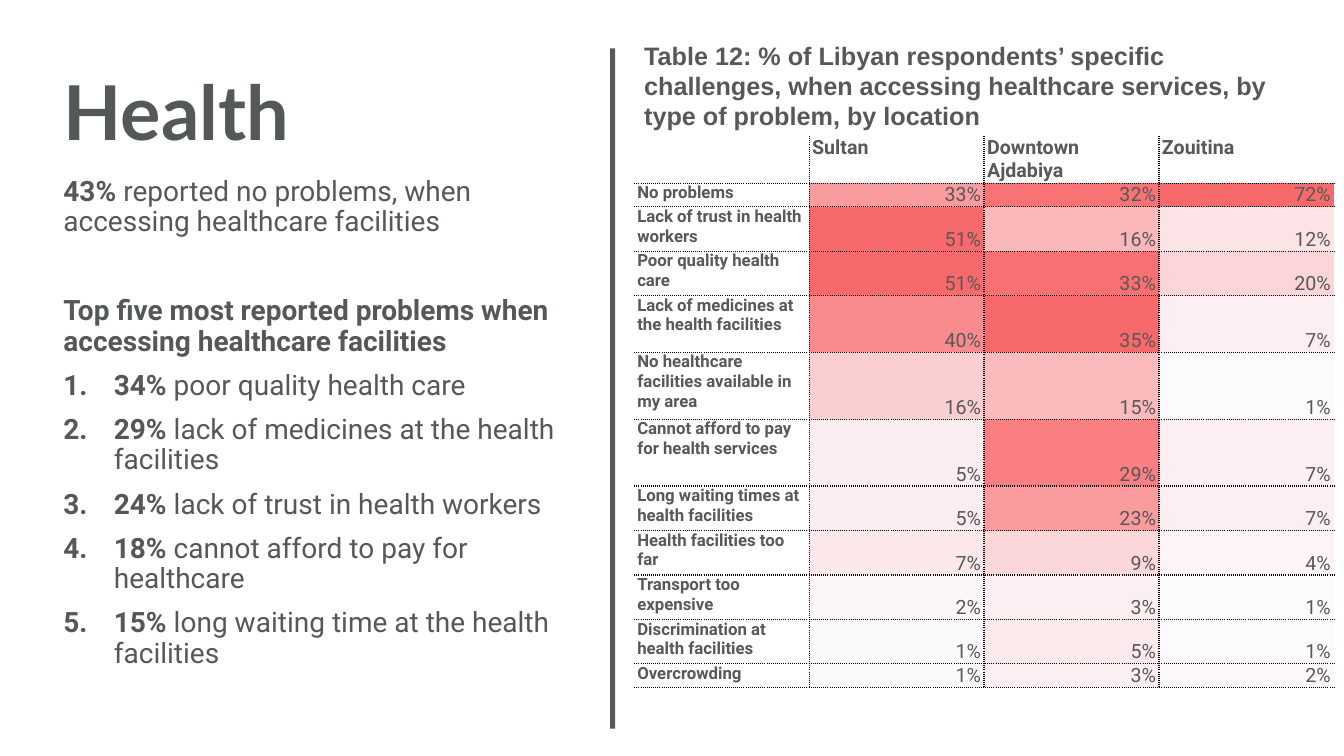
"""Build the health slide: key findings on the left, a shaded table on the right."""
from lxml.etree import SubElement
from pptx import Presentation
from pptx.dml.color import RGBColor
from pptx.enum.shapes import MSO_SHAPE as Shape
from pptx.enum.text import MSO_ANCHOR as Anchor, MSO_AUTO_SIZE as AutoSize, PP_ALIGN as Align
from pptx.oxml.ns import qn
from pptx.util import Inches, Pt

WIDTH, HEIGHT = Inches(13.33), Inches(7.5)
GREY, TABLE_GREY = "555859", "58585A"

FINDINGS = [
    ("34% ", "poor quality health care"),
    ("29% ", "lack of medicines at the health facilities"),
    ("24% ", "lack of trust in health workers"),
    ("18% ", "cannot afford to pay for healthcare"),
    ("15% ", "long waiting time at the health facilities"),
]
LOCATIONS = ["", "Sultan", "Downtown Ajdabiya", "Zouitina"]
HEADER_HEIGHT = 6.13
PROBLEMS = [
    ("No problems", 3.1, (33, "FA9C9F"), (32, "F97274"), (72, "F8696B")),
    ("Lack of trust in health workers", 5.88, (51, "F8696B"), (16, "FBB8BB"), (12, "FCE3E6")),
    ("Poor quality health care", 5.88, (51, "F8696B"), (33, "F97072"), (20, "FBD5D7")),
    ("Lack of medicines at the health facilities", 7.5,
     (40, "F98A8D"), (35, "F8696B"), (7, "FCEEF1")),
    ("No healthcare facilities available in my area", 8.85,
     (16, "FBCFD2"), (15, "FBBBBD"), (1, "FCFAFD")),
    ("Cannot afford to pay for health services", 8.85,
     (5, "FCEDF0"), (29, "F97F82"), (7, "FCEEF1")),
    ("Long waiting times at health facilities", 5.88,
     (5, "FCEDF0"), (23, "FA9C9E"), (7, "FCEEF1")),
    ("Health facilities too far", 5.88, (7, "FCE7EA"), (9, "FBD7DA"), (4, "FCF4F7")),
    ("Transport too expensive", 5.88, (2, "FCF6F9"), (3, "FCEFF2"), (1, "FCFAFD")),
    ("Discrimination at health facilities", 5.88,
     (1, "FCF9FC"), (5, "FCE9EC"), (1, "FCFAFD")),
    ("Overcrowding", 3.1, (1, "FCF9FC"), (3, "FCEFF2"), (2, "FCF8FB")),
]


def color(hex_code):
    """Turn a hex string into a colour."""
    return RGBColor.from_string(hex_code)


def across(percent):
    """Return a share of the slide width."""
    return int(WIDTH * percent / 100)


def down(percent):
    """Return a share of the slide height."""
    return int(HEIGHT * percent / 100)


def area(left, top, width, height):
    """Return a rectangle given in percent of the slide."""
    return across(left), down(top), across(width), down(height)


def add_run(paragraph, text, size, bold=True, font="Roboto", hex_code=GREY):
    """Add one formatted run to a paragraph."""
    run = paragraph.add_run()
    run.text = text
    run.font.name, run.font.size, run.font.bold = font, Pt(size), bold
    run.font.color.rgb = color(hex_code)


def number(paragraph):
    """Give a paragraph a hanging automatic number."""
    properties = paragraph._p.get_or_add_pPr()
    properties.set("marL", str(Inches(0.5)))
    properties.set("indent", str(-Inches(0.5)))
    SubElement(properties, qn("a:buFont"), typeface="+mj-lt")
    SubElement(properties, qn("a:buAutoNum"), type="arabicPeriod")


def add_divider(slide):
    """Draw the vertical bar between the two halves."""
    bar = slide.shapes.add_shape(Shape.RECTANGLE, *area(45.39, 6.4, 0.38, 90))
    bar.shadow.inherit = False
    bar.fill.solid()
    bar.fill.fore_color.rgb = color(GREY)
    bar.line.fill.background()


def set_title(slide, text):
    """Place and format the title placeholder."""
    title = slide.shapes.title
    title.left, title.top, title.width, title.height = area(3.98, 9.33, 38.78, 12.8)
    frame = title.text_frame
    frame.vertical_anchor, frame.auto_size = Anchor.TOP, AutoSize.NONE
    paragraph = frame.paragraphs[0]
    paragraph.alignment, paragraph.line_spacing = Align.LEFT, 0.9
    add_run(paragraph, text, 54, font="Lato")


def add_text_frame(slide, bounds):
    """Add a wrapping text box and return its frame."""
    frame = slide.shapes.add_textbox(*area(*bounds)).text_frame
    frame.word_wrap = True
    return frame


def add_findings(slide):
    """Write the key figure and the numbered list of problems."""
    frame = add_text_frame(slide, (3.98, 22.8, 39.61, 67.87))
    lead = frame.paragraphs[0]
    add_run(lead, "43% ", 20)
    add_run(lead, "reported no problems, when accessing healthcare facilities", 20, False)
    lead.line_spacing = 0.9
    heading = frame.add_paragraph()
    heading.line_spacing, heading.space_before = 0.9, Pt(42)
    add_run(heading, "Top five most reported problems when accessing healthcare facilities", 20)
    for share, problem in FINDINGS:
        paragraph = frame.add_paragraph()
        paragraph.line_spacing, paragraph.space_before = 0.9, Pt(10)
        number(paragraph)
        add_run(paragraph, share, 20)
        add_run(paragraph, problem, 20, False)


def add_caption(slide, text):
    """Write the caption above the table."""
    paragraph = add_text_frame(slide, (47.19, 4.67, 50.04, 13.47)).paragraphs[0]
    add_run(paragraph, text, 18, font="Arial", hex_code=TABLE_GREY)


def set_borders(cell, dotted_sides):
    """Draw dotted lines on the named sides and none on the others."""
    properties = cell._tc.get_or_add_tcPr()
    for side in "LRTB":
        line = SubElement(properties, qn(f"a:ln{side}"), w=str(Pt(1)))
        if side in dotted_sides:
            fill = SubElement(line, qn("a:solidFill"))
            SubElement(fill, qn("a:srgbClr"), val="000000")
            SubElement(line, qn("a:prstDash"), val="sysDot")
        else:
            SubElement(line, qn("a:noFill"))


def fill_cell(cell, text, size, sides, shade=None):
    """Write a table cell; shaded cells hold right-aligned values."""
    cell.margin_left = cell.margin_right = Inches(0.03)
    cell.margin_top = cell.margin_bottom = 0
    set_borders(cell, sides)
    paragraph = cell.text_frame.paragraphs[0]
    if shade:
        cell.fill.solid()
        cell.fill.fore_color.rgb = color(shade)
        cell.vertical_anchor = Anchor.BOTTOM
        paragraph.alignment = Align.RIGHT
    else:
        cell.fill.background()
    if text:
        add_run(paragraph, text, size, bold=not shade, hex_code=TABLE_GREY)


def add_problem_table(slide):
    """Add the table of problems by location."""
    columns = len(LOCATIONS)
    bounds = area(47.19, 18, 52.06, 72.8)
    table = slide.shapes.add_table(len(PROBLEMS) + 1, columns, *bounds).table
    table.first_row = table.horz_banding = False
    sides = ["RTB"] + ["LRTB"] * (columns - 2) + ["LTB"]
    for column in table.columns:
        column.width = bounds[2] // columns
    table.rows[0].height = down(HEADER_HEIGHT)
    for index, location in enumerate(LOCATIONS):
        fill_cell(table.cell(0, index), location, 14, sides[index].replace("T", ""))
    for row, (problem, height, *values) in enumerate(PROBLEMS, 1):
        table.rows[row].height = down(height)
        fill_cell(table.cell(row, 0), problem, 12, sides[0])
        for index, (value, shade) in enumerate(values, 1):
            fill_cell(table.cell(row, index), f"{value}%", 14, sides[index], shade)


def main():
    """Build and save the presentation."""
    presentation = Presentation()
    presentation.slide_width, presentation.slide_height = WIDTH, HEIGHT
    slide = presentation.slides.add_slide(presentation.slide_layouts[5])
    add_divider(slide)
    set_title(slide, "Health")
    add_findings(slide)
    add_caption(slide, "Table 12: % of Libyan respondents’ specific challenges, when accessing "
                       "healthcare services, by type of problem, by location")
    add_problem_table(slide)
    presentation.save("out.pptx")


if __name__ == "__main__":
    main()
